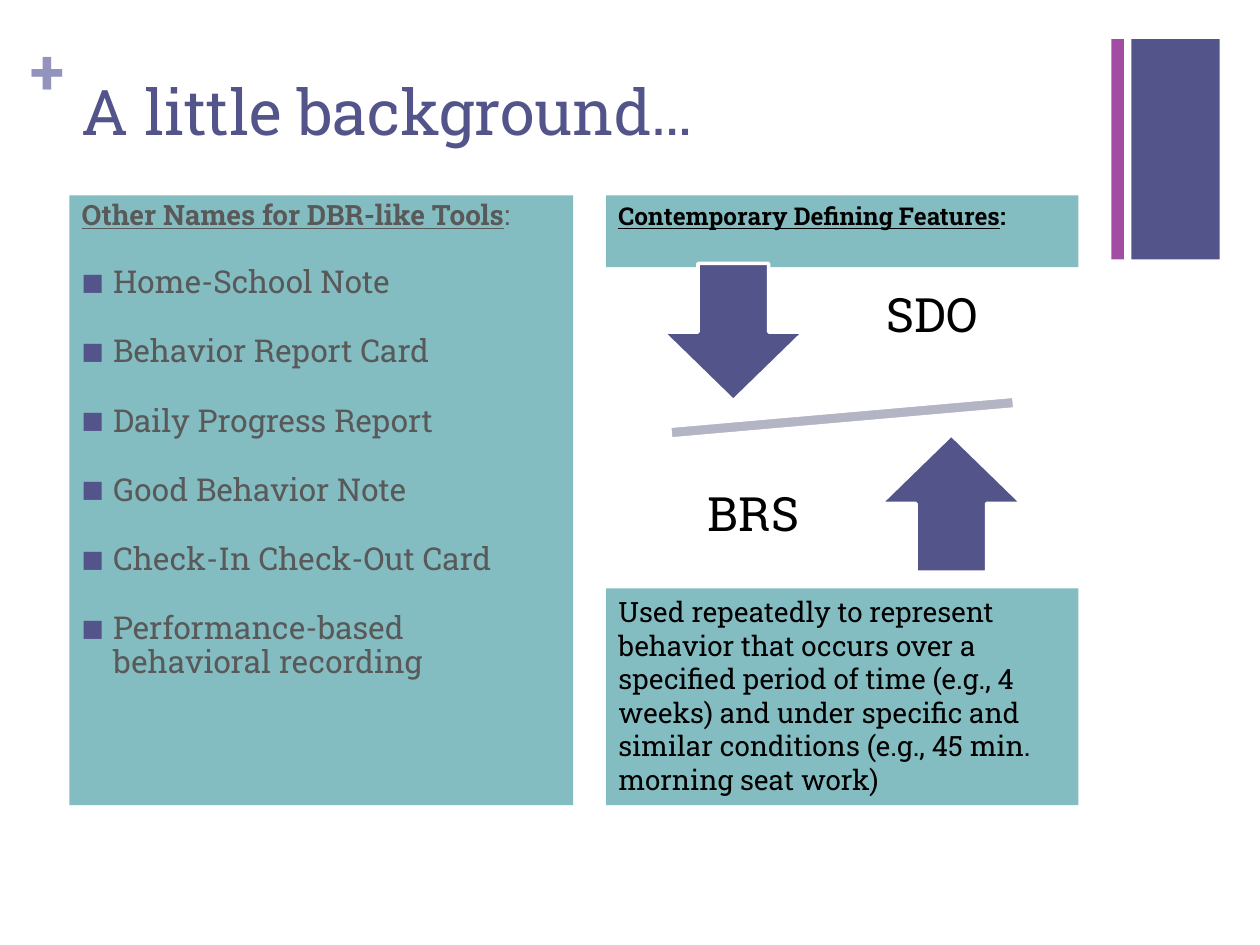
from typing import NamedTuple

from lxml.etree import SubElement
from pptx import Presentation
from pptx.dml.color import RGBColor
from pptx.enum.shapes import MSO_SHAPE as Shape
from pptx.enum.text import MSO_ANCHOR as Anchor, PP_ALIGN as Align
from pptx.oxml.ns import qn
from pptx.util import Inches, Pt

FONT = "Roboto Slab"
INDIGO = RGBColor(0x53, 0x54, 0x8A)
PURPLE = RGBColor(0xA0, 0x4D, 0xA3)
LAVENDER = RGBColor(0x93, 0x94, 0xBE)
TEAL = RGBColor(0x83, 0xBC, 0xC1)
GREY = RGBColor(0x59, 0x59, 0x59)
BAR = RGBColor(0xB3, 0xB4, 0xC4)
BLACK = RGBColor(0, 0, 0)
WHITE = RGBColor(0xFF, 0xFF, 0xFF)

TOOLS = [
    "Home-School Note",
    "Behavior Report Card",
    "Daily Progress Report",
    "Good Behavior Note",
    "Check-In Check-Out Card",
    "Performance-based behavioral recording",
]
USAGE = (
    "Used repeatedly to represent behavior that occurs over a specified period "
    "of time (e.g., 4 weeks) and under specific and similar conditions "
    "(e.g., 45 min. morning seat work)"
)


class Area(NamedTuple):
    left: float
    top: float
    width: float
    height: float

    def lengths(self):
        return [Inches(value) for value in self]


def add_filled(page, kind, area: Area, fill: RGBColor, outlined: bool = False):
    shape = page.shapes.add_shape(kind, *area.lengths())
    shape.shadow.inherit = False
    shape.fill.solid()
    shape.fill.fore_color.rgb = fill
    if outlined:
        shape.line.color.rgb = WHITE
        shape.line.width = Pt(2)
    else:
        shape.line.fill.background()
    shape.text_frame.vertical_anchor = Anchor.TOP
    return shape


def style(para, size: float, color: RGBColor, bold: bool = False, align=Align.LEFT) -> None:
    para.alignment = align
    font = para.font
    font.name, font.size, font.bold = FONT, Pt(size), bold
    font.color.rgb = color


def add_text(page, area: Area, text: str, size: float, color: RGBColor,
             inset: float | None = None, bold: bool = False,
             anchor=Anchor.TOP, align=Align.LEFT):
    """Add a one-paragraph text box; inset replaces the default margins."""
    frame = page.shapes.add_textbox(*area.lengths()).text_frame
    frame.word_wrap = True
    frame.vertical_anchor = anchor
    if inset is not None:
        frame.margin_left = frame.margin_right = Inches(inset)
        frame.margin_top = frame.margin_bottom = Inches(inset)
    para = frame.paragraphs[0]
    para.text = text
    style(para, size, color, bold, align)
    return para


def add_heading(para, text: str, size: float, color: RGBColor, bold_colon: bool) -> None:
    """Write an underlined bold heading followed by a plain colon."""
    style(para, size, color)
    for part, bold, underline in ((text, True, True), (":", bold_colon, False)):
        span = para.add_run()
        span.text = part
        span.font.bold, span.font.underline = bold, underline


def add_bullet(para) -> None:
    properties = para._p.get_or_add_pPr()
    properties.set("marL", str(Inches(0.25)))
    properties.set("indent", str(Inches(-0.25)))
    color = SubElement(properties, qn("a:buClr"))
    SubElement(color, qn("a:srgbClr"), val=str(INDIGO))
    SubElement(properties, qn("a:buSzPct"), val="75000")
    SubElement(properties, qn("a:buFont"), typeface=FONT)
    SubElement(properties, qn("a:buChar"), char="■")


def add_tools_panel(page) -> None:
    frame = add_filled(page, Shape.RECTANGLE, Area(0.55, 1.55, 4, 4.84), TEAL).text_frame
    heading = frame.paragraphs[0]
    add_heading(heading, "Other Names for DBR-like Tools", 16, GREY, bold_colon=False)
    heading.line_spacing = 0.9
    for tool in TOOLS:
        para = frame.add_paragraph()
        para.text = tool
        add_bullet(para)
        para.line_spacing = 0.9
        para.space_before = Pt(20)
        style(para, 18, GREY)


def add_balance(page) -> None:
    bar = add_filled(page, Shape.MATH_MINUS, Area(4.82, 3.1, 3.73, 0.43), BAR, outlined=True)
    bar.rotation = 355
    for kind, left, top in ((Shape.DOWN_ARROW, 5.26, 2.09), (Shape.UP_ARROW, 6.99, 3.45)):
        add_filled(page, kind, Area(left, top, 1.12, 1.09), INDIGO, outlined=True)
    for label, left, top in (("SDO", 6.8, 1.95), ("BRS", 5.38, 3.53)):
        para = add_text(page, Area(left, top, 1.2, 1.14), label, 27, BLACK,
                        inset=0.21, anchor=Anchor.MIDDLE, align=Align.CENTER)
        para.line_spacing = 0.9


def main() -> None:
    deck = Presentation()
    deck.slide_width, deck.slide_height = Inches(10), Inches(7.5)
    page = deck.slides.add_slide(deck.slide_layouts[6])

    add_filled(page, Shape.RECTANGLE, Area(8.98, 0.31, 0.7, 1.75), INDIGO)
    add_filled(page, Shape.RECTANGLE, Area(8.82, 0.31, 0.1, 1.75), PURPLE)
    add_text(page, Area(0.24, 0.25, 0.29, 0.61), "+", 36, LAVENDER, inset=0, bold=True)

    features = add_filled(page, Shape.RECTANGLE, Area(4.81, 1.55, 3.75, 0.57), TEAL)
    add_heading(features.text_frame.paragraphs[0], "Contemporary Defining Features",
                14, BLACK, bold_colon=True)
    add_text(page, Area(0.55, 0.53, 8.26, 1.22), "A little background…", 36, INDIGO)
    add_tools_panel(page)
    add_balance(page)

    usage = add_filled(page, Shape.RECTANGLE, Area(4.81, 4.67, 3.75, 1.72), TEAL)
    para = usage.text_frame.paragraphs[0]
    para.text = USAGE
    style(para, 16, BLACK)

    deck.save("out.pptx")


if __name__ == "__main__":
    main()
